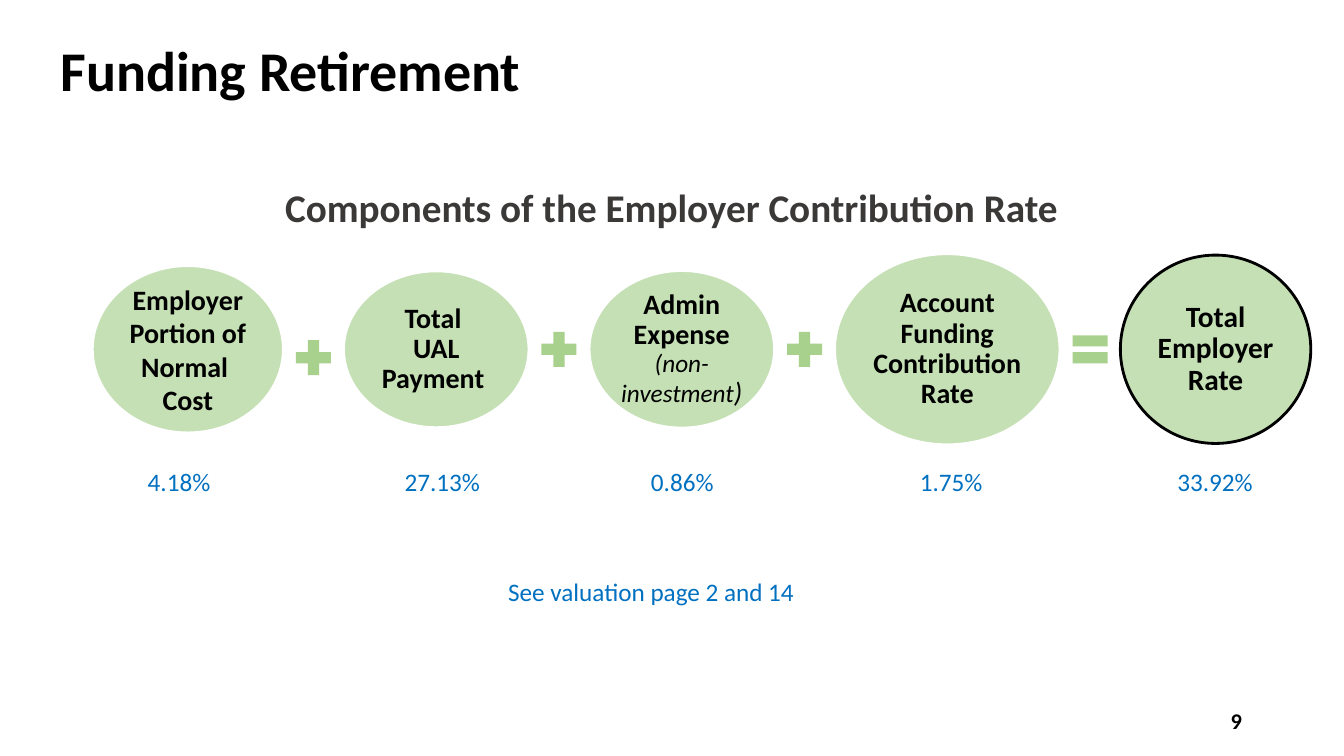
from dataclasses import dataclass

from lxml import etree
from pptx import Presentation
from pptx.dml.color import RGBColor
from pptx.enum.shapes import MSO_SHAPE
from pptx.enum.text import MSO_ANCHOR, PP_ALIGN
from pptx.oxml.ns import qn
from pptx.util import Pt

OVAL, ROUND = MSO_SHAPE.OVAL, MSO_SHAPE.FLOWCHART_CONNECTOR
PLUS, EQUAL = MSO_SHAPE.MATH_PLUS, MSO_SHAPE.MATH_EQUAL
TOP, MID = MSO_ANCHOR.TOP, MSO_ANCHOR.MIDDLE
LEFT, MIDDLE, RIGHT = PP_ALIGN.LEFT, PP_ALIGN.CENTER, PP_ALIGN.RIGHT


@dataclass(frozen=True)
class Theme:
    """Hold the font, colours and type sizes."""
    font: str = "Calibri"
    black: str = "000000"
    white: str = "FFFFFF"
    gray: str = "3B3838"
    blue: str = "0070C0"
    pale: str = "C5E0B4"
    green: str = "A9D18E"
    title: int = 40
    head: int = 28
    total: int = 21
    body: int = 20
    note: int = 18
    page: int = 16


LOOK = Theme()
BOLD = {"size": Pt(LOOK.body), "bold": True}
SOFT = {"size": Pt(LOOK.note), "italic": True}
CLOSE = {"size": Pt(LOOK.body), "italic": True}
SUM = {"size": Pt(LOOK.total), "bold": True}
BLUE = {"size": Pt(LOOK.note)}

GAP, SIGN = 4.7, 34
PARTS = [
    (OVAL, 136, 119, 1, [[("Employer", BOLD)], [("Portion of Normal \nCost", BOLD)]], "4.18%"),
    (OVAL, 132, 111.5, 0.9, [[("Total \nUAL Payment ", BOLD)]], "27.13%"),
    (ROUND, 132, 112, 0.9,
     [[("Admin Expense ", BOLD), ("(non- investment", SOFT), (")", CLOSE)]], "0.86%"),
    (OVAL, 160.5, 136, 0.9, [[("Account Funding Contribution Rate", BOLD)]], "1.75%"),
    (OVAL, 136, 134.5, 0.9, [[("Total Employer Rate", SUM)]], "33.92%"),
]
SIGNS = [(PLUS, 6), (PLUS, 0), (PLUS, 0), (EQUAL, 0)]
STOPS = [43, 231, 402.5, 594.5, 783]


def write(frame, paras, color, align, anchor, space=1, pad=(7.2, 3.6, 7.2, 3.6)):
    """Fill a text frame with paragraphs of formatted runs."""
    sides = ("margin_left", "margin_top", "margin_right", "margin_bottom")
    attrs = dict(zip(sides, map(Pt, pad)), word_wrap=True, vertical_anchor=anchor)
    for name, value in attrs.items():
        setattr(frame, name, value)
    for i, runs in enumerate(paras):
        para = frame.add_paragraph() if i else frame.paragraphs[0]
        para.alignment, para.line_spacing = align, space
        for text, style in runs:
            for j, line in enumerate(text.split("\n")):
                if j:
                    para.add_line_break()
                run = para.add_run()
                run.text = line
                run.font.color.rgb = RGBColor.from_string(color)
                for name, value in {"name": LOOK.font, **style}.items():
                    setattr(run.font, name, value)


def label(slide, box, text, style, color, align, anchor=TOP, **more):
    """Place one line of text in a box."""
    item = slide.shapes.add_textbox(*map(Pt, box))
    write(item.text_frame, [[(text, style)]], color, align, anchor, **more)
    return item


def shape(slide, kind, box, fill, line=None, width=0):
    """Place a filled shape in a box."""
    item = slide.shapes.add_shape(kind, *map(Pt, box))
    item.shadow.inherit = False
    item.fill.solid()
    item.fill.fore_color.rgb = RGBColor.from_string(fill)
    if line:
        item.line.color.rgb = RGBColor.from_string(line)
        item.line.width = Pt(width)
    else:
        item.line.fill.background()
    return item


def chain(slide, box):
    """Lay the rate parts and their signs out from left to right."""
    left, top, _, high = box
    mid = top + high / 2
    last = len(PARTS) - 1
    for i, (kind, wide, tall, space, paras, _) in enumerate(PARTS):
        edge, width = (LOOK.black, 2) if i == last else (LOOK.white, 1.5)
        item = shape(slide, kind, (left, mid - tall / 2, wide, tall), LOOK.pale, edge, width)
        write(item.text_frame, paras, LOOK.black, MIDDLE, MID, space, (2.2,) * 4)
        left += wide + GAP
        if i < last:
            sign, drop = SIGNS[i]
            shape(slide, sign, (left, mid - SIGN / 2 + drop, SIGN, SIGN), LOOK.green)
            left += SIGN + GAP


def rates(slide, box):
    """Write the rates in a row on centred tab stops."""
    text = "".join("\t" + part[-1] for part in PARTS)
    item = label(slide, box, text, BLUE, LOOK.blue, LEFT)
    props = item.text_frame.paragraphs[0]._p.get_or_add_pPr()
    tabs = etree.SubElement(props, qn("a:tabLst"))
    for stop in STOPS:
        etree.SubElement(tabs, qn("a:tab"), pos=str(Pt(stop)), algn="ctr")


def main():
    """Build and save the slide."""
    deck = Presentation()
    deck.slide_width, deck.slide_height = Pt(960), Pt(540)
    slide = deck.slides.add_slide(deck.slide_layouts[6])
    label(slide, (0, 0, 960, 104.4), "Funding Retirement",
          {"size": Pt(LOOK.title), "bold": True}, LOOK.black, LEFT, MID,
          space=0.9, pad=(43.2, 3.6, 7.2, 3.6))
    label(slide, (44.6, 127.4, 870, 41), "Components of the Employer Contribution Rate",
          {"size": Pt(LOOK.head), "bold": True}, LOOK.gray, MIDDLE)
    chain(slide, (66.2, 181.5, 870, 136))
    rates(slide, (77.8, 329.8, 846, 29))
    label(slide, (306, 408.2, 318.2, 29), "See valuation page 2 and 14", BLUE, LOOK.blue, MIDDLE)
    label(slide, (678.2, 500.4, 216, 28.8), "9",
          {"size": Pt(LOOK.page), "bold": True}, LOOK.black, RIGHT, MID)
    deck.save("out.pptx")


if __name__ == "__main__":
    main()
